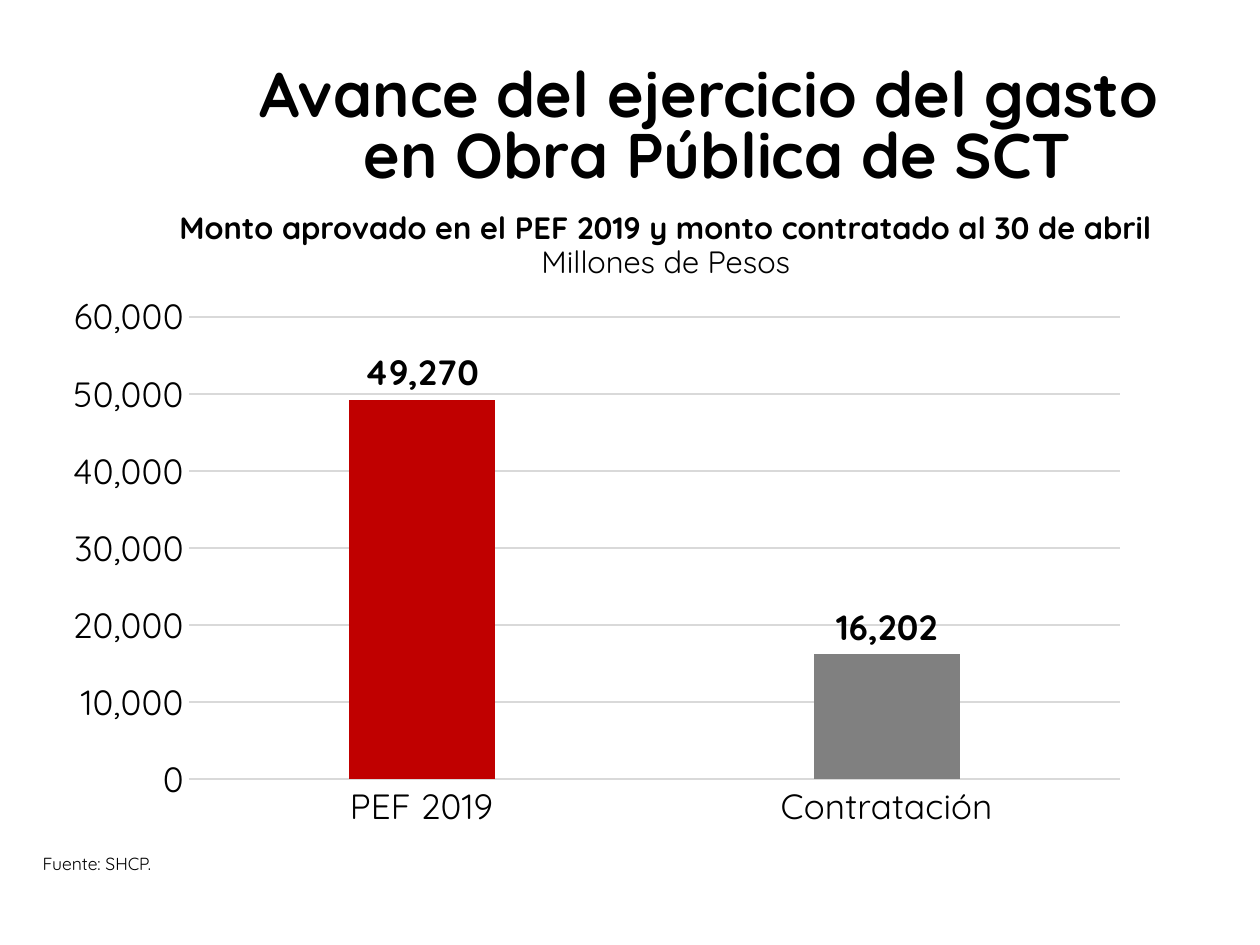
from dataclasses import dataclass

from lxml import etree
from pptx import Presentation
from pptx.chart.data import CategoryChartData
from pptx.dml.color import RGBColor
from pptx.enum.chart import XL_CHART_TYPE, XL_LABEL_POSITION, XL_TICK_MARK
from pptx.enum.text import MSO_ANCHOR, PP_ALIGN
from pptx.oxml.ns import qn
from pptx.util import Inches, Pt

COLUMN_CLUSTERED = XL_CHART_TYPE.COLUMN_CLUSTERED
OUTSIDE_END = XL_LABEL_POSITION.OUTSIDE_END
NO_TICK = XL_TICK_MARK.NONE
TOP, BOTTOM = MSO_ANCHOR.TOP, MSO_ANCHOR.BOTTOM
CENTER, JUSTIFY = PP_ALIGN.CENTER, PP_ALIGN.JUSTIFY

SLIDE_WIDTH, SLIDE_HEIGHT = Inches(10), Inches(7.5)
COLUMNS, ROWS = 100, 75


@dataclass(frozen=True)
class Theme:
    font: str = "Quicksand"
    ink: RGBColor = RGBColor(0, 0, 0)
    grid: RGBColor = RGBColor(0xD9, 0xD9, 0xD9)
    approved: RGBColor = RGBColor(0xC0, 0, 0)
    contracted: RGBColor = RGBColor(0x80, 0x80, 0x80)
    title_size: float = 36
    subtitle_size: float = 17.6
    chart_size: float = 20
    source_size: float = 10
    hairline: float = 0.75


THEME = Theme()


@dataclass(frozen=True)
class Area:
    column: float
    row: float
    columns: float
    rows: float

    def frame(self) -> tuple[int, int, int, int]:
        cell_width, cell_height = SLIDE_WIDTH / COLUMNS, SLIDE_HEIGHT / ROWS
        return (
            round(self.column * cell_width),
            round(self.row * cell_height),
            round(self.columns * cell_width),
            round(self.rows * cell_height),
        )


@dataclass(frozen=True)
class Line:
    text: str
    bold: bool = False


@dataclass(frozen=True)
class Caption:
    area: Area
    lines: tuple[Line, ...]
    size: float
    spacing: float = 1.0
    align: PP_ALIGN = CENTER
    anchor: MSO_ANCHOR = BOTTOM


@dataclass(frozen=True)
class Bar:
    category: str
    amount: int
    color: RGBColor


CAPTIONS = (
    Caption(
        Area(13.9, 4.2, 86.1, 11.4),
        (
            Line("Avance del ejercicio del gasto ", True),
            Line("en Obra Pública de SCT", True),
        ),
        THEME.title_size,
        0.8,
    ),
    Caption(
        Area(9.4, 14.7, 86.9, 8),
        (
            Line("Monto aprovado en el PEF 2019 y monto contratado al 30 de abril", True),
            Line("Millones de Pesos"),
        ),
        THEME.subtitle_size,
        0.9,
    ),
    Caption(
        Area(2.4, 67.2, 98.8, 2.7),
        (Line("Fuente: SHCP."),),
        THEME.source_size,
        align=JUSTIFY,
        anchor=TOP,
    ),
)
CHART_AREA = Area(3.7, 22.5, 86.9, 44.2)
PLOT_SHARES = {"x": 0.13, "y": 0.06, "w": 0.85, "h": 0.83}
BARS = (
    Bar("PEF 2019", 49270, THEME.approved),
    Bar("Contratación", 16202, THEME.contracted),
)


def style_font(font, size: float, bold: bool = False) -> None:
    font.name = THEME.font
    font.size = Pt(size)
    font.bold = bold
    font.color.rgb = THEME.ink


def draw_caption(page, caption: Caption) -> None:
    box = page.shapes.add_textbox(*caption.area.frame())
    frame = box.text_frame
    frame.word_wrap = True
    frame.vertical_anchor = caption.anchor
    para = frame.paragraphs[0]
    para.alignment = caption.align
    para.line_spacing = caption.spacing
    style_font(para.font, caption.size)
    for index, line in enumerate(caption.lines):
        if index:
            para.add_line_break()
        span = para.add_run()
        span.text = line.text
        style_font(span.font, caption.size, line.bold)


def style_line(line) -> None:
    line.color.rgb = THEME.grid
    line.width = Pt(THEME.hairline)


def place_plot(chart) -> None:
    plot_area = chart._chartSpace.chart.plotArea
    for layout in plot_area.findall(qn("c:layout")):
        plot_area.remove(layout)
    layout = etree.Element(qn("c:layout"))
    manual = etree.SubElement(layout, qn("c:manualLayout"))
    settings = {"layoutTarget": "inner", "xMode": "edge", "yMode": "edge", **PLOT_SHARES}
    for tag, setting in settings.items():
        etree.SubElement(manual, qn(f"c:{tag}")).set("val", str(setting))
    plot_area.insert(0, layout)


def draw_chart(page, area: Area, bars: tuple[Bar, ...]) -> None:
    data = CategoryChartData(number_format="#,##0")
    data.categories = [bar.category for bar in bars]
    data.add_series("Monto", [bar.amount for bar in bars])
    chart = page.shapes.add_chart(COLUMN_CLUSTERED, *area.frame(), data).chart
    chart.has_legend = False
    chart.has_title = False
    style_font(chart.font, THEME.chart_size)
    place_plot(chart)

    for axis in (chart.category_axis, chart.value_axis):
        axis.major_tick_mark = axis.minor_tick_mark = NO_TICK
        style_font(axis.tick_labels.font, THEME.chart_size)
    style_line(chart.category_axis.format.line)
    amounts = chart.value_axis
    amounts.minimum_scale, amounts.maximum_scale, amounts.major_unit = 0, 60000, 10000
    amounts.tick_labels.number_format = "#,##0"
    amounts.tick_labels.number_format_is_linked = False
    amounts.format.line.fill.background()
    style_line(amounts.major_gridlines.format.line)

    plot = chart.plots[0]
    plot.vary_by_categories = False
    plot.gap_width, plot.overlap = 219, -27
    series = plot.series[0]
    for index, bar in enumerate(bars):
        fill = series.points[index].format.fill
        fill.solid()
        fill.fore_color.rgb = bar.color
    labels = series.data_labels
    labels.show_value = True
    labels.position = OUTSIDE_END
    labels.number_format = "#,##0"
    labels.number_format_is_linked = False
    style_font(labels.font, THEME.chart_size, True)


def main() -> None:
    deck = Presentation()
    deck.slide_width, deck.slide_height = SLIDE_WIDTH, SLIDE_HEIGHT
    page = deck.slides.add_slide(deck.slide_layouts[6])
    draw_chart(page, CHART_AREA, BARS)
    for caption in CAPTIONS:
        draw_caption(page, caption)
    deck.save("out.pptx")


if __name__ == "__main__":
    main()
